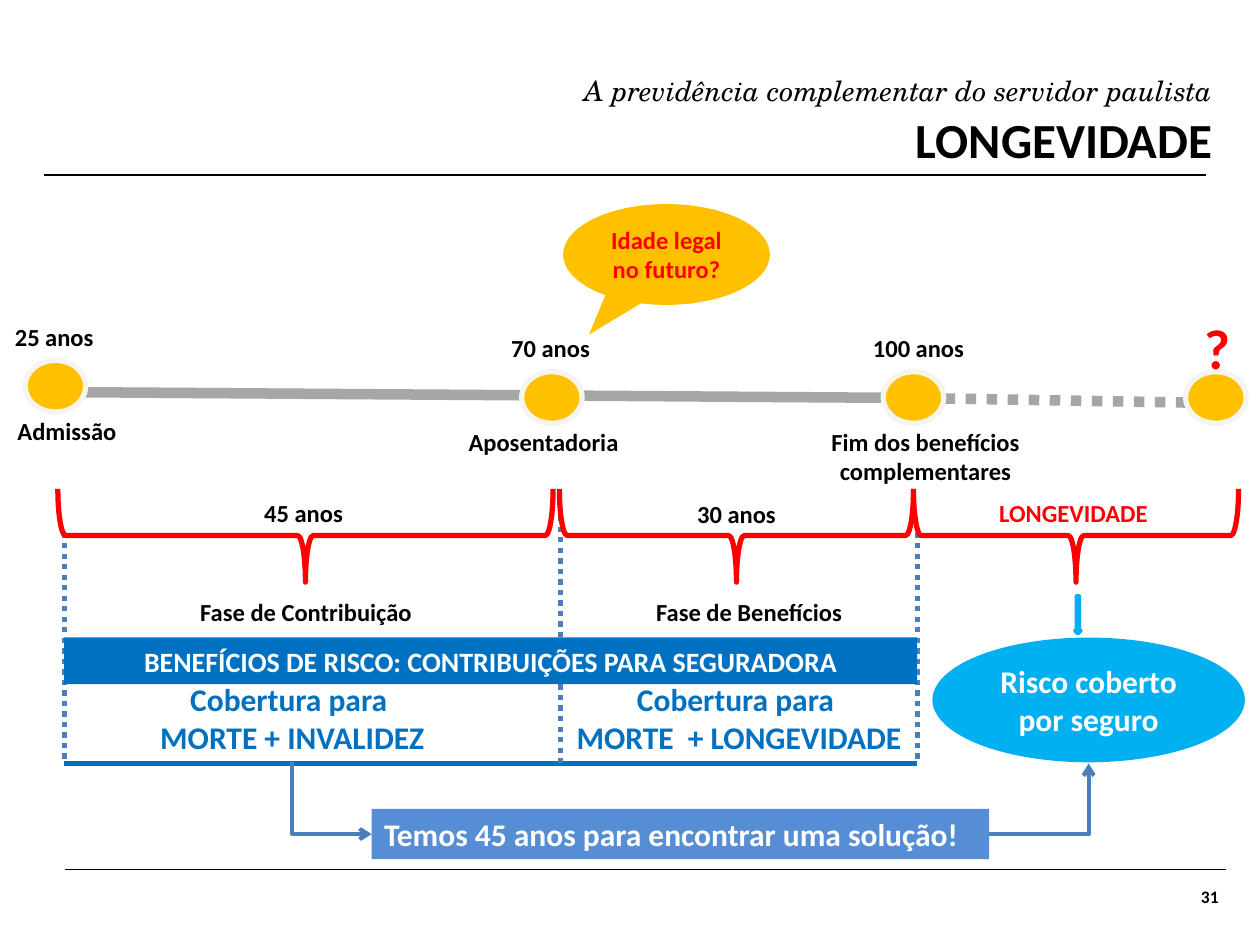
from collections import namedtuple

from lxml import etree
from pptx import Presentation
from pptx.dml.color import RGBColor
from pptx.enum.dml import MSO_LINE as Dash
from pptx.enum.shapes import MSO_CONNECTOR as Link, MSO_SHAPE as Preset
from pptx.enum.text import MSO_ANCHOR as Anchor, MSO_AUTO_SIZE as AutoSize, PP_ALIGN as Align
from pptx.oxml.ns import qn
from pptx.util import Inches, Pt

COLORS = {
    "black": "000000", "white": "FFFFFF", "red": "FF0000", "gold": "FFC000",
    "cream": "F5F4ED", "gray": "A6A6A6", "blue": "0070C0", "sky": "00B0F0",
    "steel": "4B7EBC", "soft_blue": "558ED5",
}
Box = namedtuple("Box", "left top width height")


def color(name):
    return RGBColor.from_string(COLORS[name])


def write(holder, lines, size, ink="black", align=Align.CENTER, anchor=Anchor.TOP,
          font="Calibri", bold=True, italic=False):
    frame = holder.text_frame
    frame.word_wrap = True
    frame.auto_size = AutoSize.NONE
    frame.vertical_anchor = anchor
    for index, line in enumerate(lines):
        paragraph = frame.add_paragraph() if index else frame.paragraphs[0]
        paragraph.alignment = align
        run = paragraph.add_run()
        run.text = line
        run.font.name, run.font.size = font, Pt(size)
        run.font.bold, run.font.italic = bold, italic
        run.font.color.rgb = color(ink)


def add_label(slide, left, top, width, height, lines, size=14, **style):
    label = slide.shapes.add_textbox(*map(Inches, (left, top, width, height)))
    write(label, lines, size, **style)


def add_figure(slide, preset, left, top, width, height, fill, line=None, weight=3):
    figure = slide.shapes.add_shape(preset, *map(Inches, (left, top, width, height)))
    figure.shadow.inherit = False
    figure.fill.solid()
    figure.fill.fore_color.rgb = color(fill)
    if line:
        figure.line.color.rgb = color(line)
        figure.line.width = Pt(weight)
    else:
        figure.line.fill.background()
    return figure


def add_line(slide, x1, y1, x2, y2, ink, weight, dash=None, kind=Link.STRAIGHT):
    line = slide.shapes.add_connector(kind, *map(Inches, (x1, y1, x2, y2)))
    line.line.color.rgb = color(ink)
    line.line.width = Pt(weight)
    if dash:
        line.line.dash_style = dash
    etree.SubElement(line._element.spPr, qn("a:effectLst"))
    return line


def add_elbow(slide, x1, y1, x2, y2):
    """Arrow with a single right-angle bend, leaving horizontally."""
    elbow = add_line(slide, x1, y1, x2, y2, "steel", 2.25, kind=Link.ELBOW)
    properties = elbow._element.spPr
    properties.find(qn("a:prstGeom")).set("prst", "bentConnector2")
    etree.SubElement(elbow.line._get_or_add_ln(), qn("a:tailEnd"), type="arrow")
    return elbow


def turn_down_first(elbow, x1, y1, x2, y2):
    """Rotate and mirror the elbow so that it leaves downwards."""
    width, height = y2 - y1, x2 - x1
    elbow.left, elbow.top = Inches((x1 + x2 - width) / 2), Inches((y1 + y2 - height) / 2)
    elbow.width, elbow.height = Inches(width), Inches(height)
    transform = elbow._element.spPr.find(qn("a:xfrm"))
    transform.set("rot", str(270 * 60000))
    transform.set("flipH", "1")
    transform.set("flipV", "0")


def add_brace(slide, box):
    """Brace pointing down that fills the box."""
    left = box.left + (box.width - box.height) / 2
    top = box.top + (box.height - box.width) / 2
    brace = add_figure(slide, Preset.LEFT_BRACE, left, top, box.height, box.width, "white", "red")
    brace.adjustments[0] = 0.084
    brace.rotation = 270


def add_heading(slide, box):
    add_label(slide, box.left, box.top, box.width, 0.41,
              ["A previdência complementar do servidor paulista"], 16, align=Align.RIGHT,
              anchor=Anchor.MIDDLE, font="TeX Gyre Schola", bold=False, italic=True)
    title = slide.shapes.title
    title.left, title.top = Inches(box.left), Inches(box.top + 0.39)
    title.width, title.height = Inches(box.width), Inches(0.41)
    write(title, ["LONGEVIDADE"], 28, align=Align.RIGHT, anchor=Anchor.MIDDLE)
    rule = box.top + box.height
    add_line(slide, 0.35, rule, 9.57, rule, "black", 0.75)


def add_footer(slide, box):
    right = box.left + box.width
    add_line(slide, box.left, box.top, right, box.top, "black", 0.75)
    add_label(slide, right - 2.29, box.top + 0.08, 2.33, box.height - 0.08, ["31"], 10,
              align=Align.RIGHT)


def add_timeline(slide, box):
    def x(offset):
        return box.left + offset

    def y(offset):
        return box.top + offset

    add_line(slide, x(0.01), y(0.6), x(7.25), y(0.65), "gray", 6)
    add_line(slide, x(7.13), y(0.65), x(9.5), y(0.69), "gray", 6, Dash.ROUND_DOT)
    for offset, drop in ((0, 0.35), (3.94, 0.44), (6.81, 0.44), (9.21, 0.44)):
        add_figure(slide, Preset.OVAL, x(offset), y(drop), 0.48, 0.41, "gold", "cream")
    for offset, drop, age in ((-1.03, 0, "25 anos"), (2.91, 0.08, "70 anos"),
                              (5.83, 0.08, "100 anos")):
        add_label(slide, x(offset), y(drop), 2.52, 0.34, [age])
    add_label(slide, x(8.89), y(-0.07), 1.15, 0.64, ["?"], 32, ink="red")
    add_label(slide, x(-0.16), y(0.74), 1.22, 0.34, ["Admissão"], align=Align.LEFT)
    add_label(slide, x(3.42), y(0.83), 1.69, 0.34, ["Aposentadoria"], align=Align.LEFT)
    add_label(slide, x(6.29), y(0.83), 1.71, 0.57, ["Fim dos benefícios", "complementares"])
    callout = add_figure(slide, Preset.OVAL_CALLOUT, x(4.27), y(-0.89), 1.64, 0.8, "gold")
    callout.adjustments[0], callout.adjustments[1] = -0.375, 0.795
    write(callout, ["Idade legal no futuro?"], 14, "red", anchor=Anchor.MIDDLE)


def add_coverage(slide, box):
    right, bottom = box.left + box.width, box.top + box.height
    add_line(slide, box.left, bottom, right, bottom, "blue", 3)
    for left, width, risks in ((box.left - 0.16, 3.94, "MORTE + INVALIDEZ"),
                               (box.left + 3.86, 2.99, "MORTE  + LONGEVIDADE")):
        add_label(slide, left, bottom - 0.71, width, 0.71, ["Cobertura para ", risks], 18, ink="blue")
    for x, top in ((box.left, box.top), (box.left + 3.94, box.top - 0.13), (right, box.top)):
        add_line(slide, x, top, x, bottom, "steel", 3, Dash.ROUND_DOT)
    band = add_figure(slide, Preset.RECTANGLE, box.left, box.top + 1, box.width, 0.37, "blue")
    write(band, ["BENEFÍCIOS DE RISCO: CONTRIBUIÇÕES PARA SEGURADORA"], 16, "white",
          anchor=Anchor.MIDDLE)


def add_phases(slide, box):
    for offset, width in ((0, 3.93), (3.98, 2.81), (6.79, 2.58)):
        add_brace(slide, Box(box.left + offset, box.top, width, box.height))
    for offset, drop, width, span, ink in (
            (0.22, 0.02, 3.46, "45 anos", "black"), (3.98, 0.03, 2.81, "30 anos", "black"),
            (7.02, 0.02, 2.08, "LONGEVIDADE", "red"),
            (0.24, 0.81, 3.46, "Fase de Contribuição", "black"),
            (3.58, 0.81, 3.81, "Fase de Benefícios", "black")):
        add_label(slide, box.left + offset, box.top + drop, width, 0.34, [span], ink=ink)


def add_insured_risk(slide, box):
    add_figure(slide, Preset.DOWN_ARROW, box.left + 1.13, box.top - 0.33, 0.05, 0.3, "sky", "sky", 2)
    risk = add_figure(slide, Preset.OVAL, *box, "sky")
    write(risk, ["Risco coberto por seguro"], 18, "white", anchor=Anchor.MIDDLE)


def add_solution(slide, box):
    banner = add_figure(slide, Preset.RECTANGLE, *box, "soft_blue")
    write(banner, ["Temos 45 anos para encontrar uma solução!"], 18, "white", Align.LEFT,
          Anchor.MIDDLE)
    middle, right = box.top + box.height / 2, box.left + box.width
    route = (box.left - 0.63, box.top - 0.37, box.left, middle)
    from_coverage = add_elbow(slide, *route)
    from_coverage.end_connect(banner, 1)
    turn_down_first(from_coverage, *route)
    to_risk = add_elbow(slide, right, middle, right + 0.79, box.top - 0.36)
    to_risk.begin_connect(banner, 3)


def main():
    deck = Presentation()
    deck.slide_width, deck.slide_height = Inches(10), Inches(7.5)
    slide = deck.slides.add_slide(deck.slide_layouts[5])
    add_heading(slide, Box(1.69, 0.51, 8.03, 0.88))
    add_footer(slide, Box(0.52, 6.9, 9.21, 0.48))
    add_coverage(slide, Box(0.51, 4.06, 6.77, 2))
    add_phases(slide, Box(0.46, 3.88, 9.37, 0.74))
    add_timeline(slide, Box(0.2, 2.51, 9.69, 0.85))
    add_insured_risk(slide, Box(7.4, 5.06, 2.48, 0.99))
    add_solution(slide, Box(2.95, 6.42, 4.9, 0.4))
    deck.save("out.pptx")


if __name__ == "__main__":
    main()
